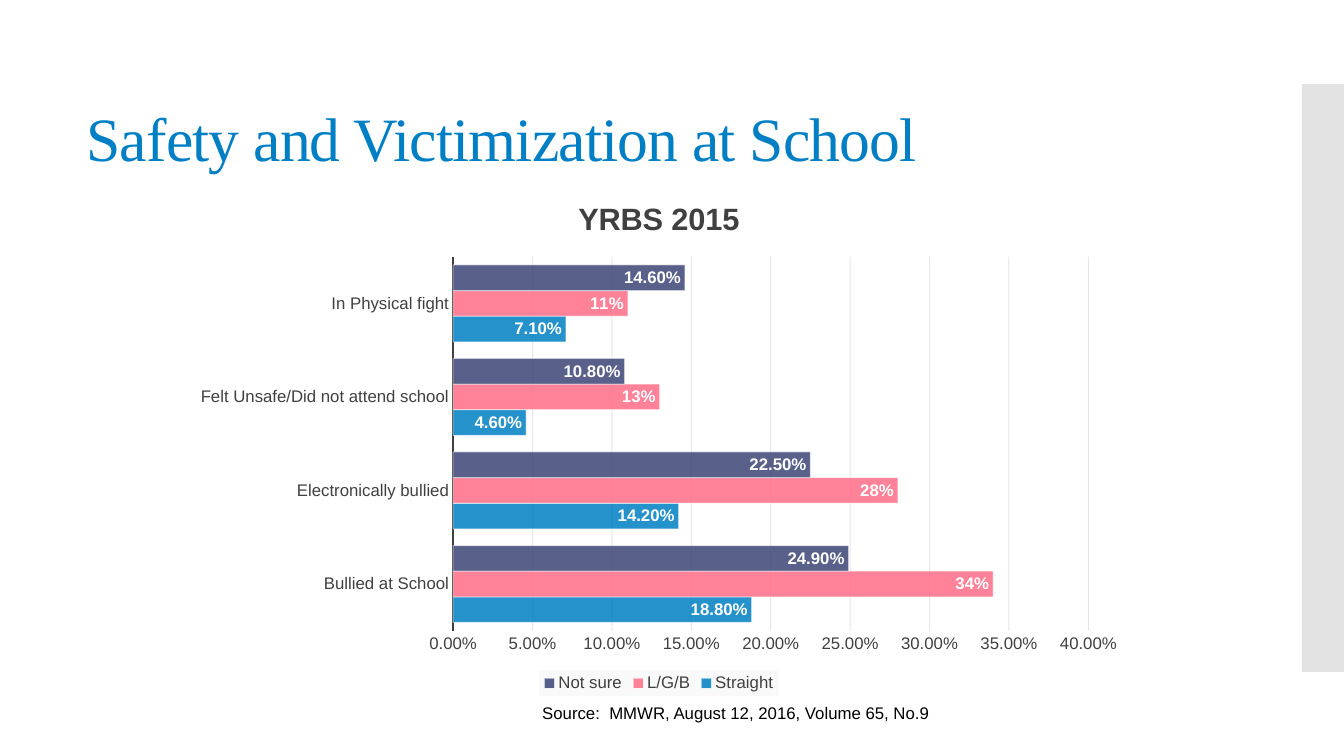
"""Build the slide on safety and victimization at school."""
from dataclasses import dataclass

import pptx
import pptx.chart.data
import pptx.dml.color
import pptx.enum.chart
import pptx.enum.shapes
import pptx.enum.text
import pptx.oxml
import pptx.oxml.ns
import pptx.util

PX = 9525
BLUE = pptx.dml.color.RGBColor(0x00, 0x7F, 0xC4)
PINK = pptx.dml.color.RGBColor(0xFF, 0x6D, 0x88)
NAVY = pptx.dml.color.RGBColor(0x3C, 0x46, 0x76)
GREY = pptx.dml.color.RGBColor(0xC8, 0xC8, 0xC8)
DARK = pptx.dml.color.RGBColor(0x40, 0x40, 0x40)
GRID = pptx.dml.color.RGBColor(0x0D, 0x0D, 0x0D)
LEGEND = pptx.dml.color.RGBColor(0xF2, 0xF2, 0xF2)
BLACK = pptx.dml.color.RGBColor(0x00, 0x00, 0x00)
WHITE = pptx.dml.color.RGBColor(0xFF, 0xFF, 0xFF)


@dataclass(frozen=True)
class Box:
    left: int
    top: int
    width: int
    height: int

    def emu(self) -> list[int]:
        return [length * PX for length in (self.left, self.top, self.width, self.height)]


@dataclass(frozen=True)
class Label:
    box: Box
    text: str
    font_name: str
    size: int
    color: pptx.dml.color.RGBColor
    wrap: bool
    line_spacing: float = 1.0
    tracking: int = 0


@dataclass(frozen=True)
class Group:
    name: str
    values: tuple[float, ...]
    color: pptx.dml.color.RGBColor
    number_format: str


SIDEBAR = Box(1240, 80, 40, 560)
CHART = Box(173, 170, 909, 493)
LABELS = (
    Label(Box(73, 61, 986, 147), "Safety and Victimization at School",
          "Times New Roman", 44, BLUE, True, 0.9, -60),
    Label(Box(507, 664, 392, 29), "Source:  MMWR, August 12, 2016, Volume 65, No.9",
          "Arial", 12, BLACK, False),
)
CATEGORIES = ("Bullied at School", "Electronically bullied",
              "Felt Unsafe/Did not attend school", "In Physical fight")
GROUPS = (
    Group("Straight", (0.188, 0.142, 0.046, 0.071), BLUE, "0.00%"),
    Group("L/G/B", (0.34, 0.28, 0.13, 0.11), PINK, "0%"),
    Group("Not sure", (0.249, 0.225, 0.108, 0.146), NAVY, "0.00%"),
)


def set_font(font, size: int, color, bold: bool = False, name: str = "Arial") -> None:
    font.name = name
    font.size = pptx.util.Pt(size)
    font.bold = bold
    font.color.rgb = color


def set_opacity(element, path: str, percent: int) -> None:
    for color in element.xpath(path + "/a:solidFill/a:srgbClr"):
        alpha = color.makeelement(pptx.oxml.ns.qn("a:alpha"), {"val": str(percent * 1000)})
        color.append(alpha)


def add_sidebar(slide) -> None:
    shape = slide.shapes.add_shape(
        pptx.enum.shapes.MSO_SHAPE.RECTANGLE, *SIDEBAR.emu())
    shape.shadow.inherit = False
    shape.fill.solid()
    shape.fill.fore_color.rgb = GREY
    shape.line.fill.background()
    set_opacity(shape.element, "p:spPr", 50)


def add_label(slide, label: Label) -> None:
    text_frame = slide.shapes.add_textbox(*label.box.emu()).text_frame
    text_frame.word_wrap = label.wrap
    text_frame.vertical_anchor = pptx.enum.text.MSO_ANCHOR.MIDDLE
    text_frame.text = label.text
    paragraph = text_frame.paragraphs[0]
    paragraph.line_spacing = label.line_spacing
    font = paragraph.runs[0].font
    set_font(font, label.size, label.color, name=label.font_name)
    for properties in text_frame.paragraphs[0].runs[0].font, :
        paragraph.runs[0].font.bold = properties.bold
    for run_properties in slide.shapes[-1].element.xpath(".//a:rPr"):
        run_properties.set("spc", str(label.tracking))


def style_series(series, group: Group) -> None:
    series.format.fill.solid()
    series.format.fill.fore_color.rgb = group.color
    series.format.line.color.rgb = WHITE
    series.format.line.width = pptx.util.Pt(0.75)
    labels = series.data_labels
    labels.show_value = True
    labels.number_format = group.number_format
    labels.number_format_is_linked = False
    labels.position = pptx.enum.chart.XL_LABEL_POSITION.INSIDE_END
    set_font(labels.font, 12, WHITE, True)


def style_axes(chart) -> None:
    for axis in (chart.category_axis, chart.value_axis):
        axis.major_tick_mark = pptx.enum.chart.XL_TICK_MARK.NONE
        axis.minor_tick_mark = pptx.enum.chart.XL_TICK_MARK.NONE
        set_font(axis.tick_labels.font, 12, DARK)
    chart.category_axis.format.line.color.rgb = DARK
    chart.category_axis.format.line.width = pptx.util.Pt(1.5)
    axis = chart.value_axis
    axis.minimum_scale, axis.maximum_scale, axis.major_unit = 0, 0.4, 0.05
    axis.tick_labels.number_format = "0.00%"
    axis.tick_labels.number_format_is_linked = False
    axis.format.line.fill.background()
    axis.has_major_gridlines = True
    axis.major_gridlines.format.line.color.rgb = GRID
    axis.major_gridlines.format.line.width = pptx.util.Pt(0.75)


def style_legend(chart) -> None:
    chart.has_legend = True
    chart.legend.position = pptx.enum.chart.XL_LEGEND_POSITION.BOTTOM
    chart.legend.include_in_layout = False
    set_font(chart.legend.font, 12, DARK)
    background = pptx.oxml.parse_xml(
        f'<c:spPr {pptx.oxml.ns.nsdecls("c", "a")}><a:solidFill>'
        f'<a:srgbClr val="{LEGEND}"/></a:solidFill></c:spPr>')
    chart.element.xpath("c:chart/c:legend/c:txPr")[0].addprevious(background)


def add_bullying_chart(slide) -> None:
    data = pptx.chart.data.CategoryChartData(number_format="0.00%")
    data.categories = CATEGORIES
    for group in GROUPS:
        data.add_series(group.name, group.values)
    chart = slide.shapes.add_chart(
        pptx.enum.chart.XL_CHART_TYPE.BAR_CLUSTERED, *CHART.emu(), data).chart
    set_font(chart.font, 10, BLACK)
    chart.has_title = True
    chart.chart_title.text_frame.text = "YRBS 2015"
    title = chart.chart_title.text_frame.paragraphs[0]
    set_font(title.runs[0].font, 22, DARK, True)
    plot = chart.plots[0]
    plot.gap_width = 65
    plot.overlap = 0
    plot.vary_by_categories = False
    for series, group in zip(plot.series, GROUPS):
        style_series(series, group)
    style_axes(chart)
    style_legend(chart)
    set_opacity(chart.element, ".//c:ser/c:spPr", 85)
    set_opacity(chart.element, ".//c:ser/c:spPr/a:ln", 50)
    set_opacity(chart.element, ".//c:majorGridlines/c:spPr/a:ln", 10)
    set_opacity(chart.element, ".//c:legend/c:spPr", 39)


def main() -> None:
    presentation = pptx.Presentation()
    presentation.slide_width = 1280 * PX
    presentation.slide_height = 720 * PX
    slide = presentation.slides.add_slide(presentation.slide_layouts[6])
    add_sidebar(slide)
    add_bullying_chart(slide)
    for label in LABELS:
        add_label(slide, label)
    presentation.save("out.pptx")


if __name__ == "__main__":
    main()
